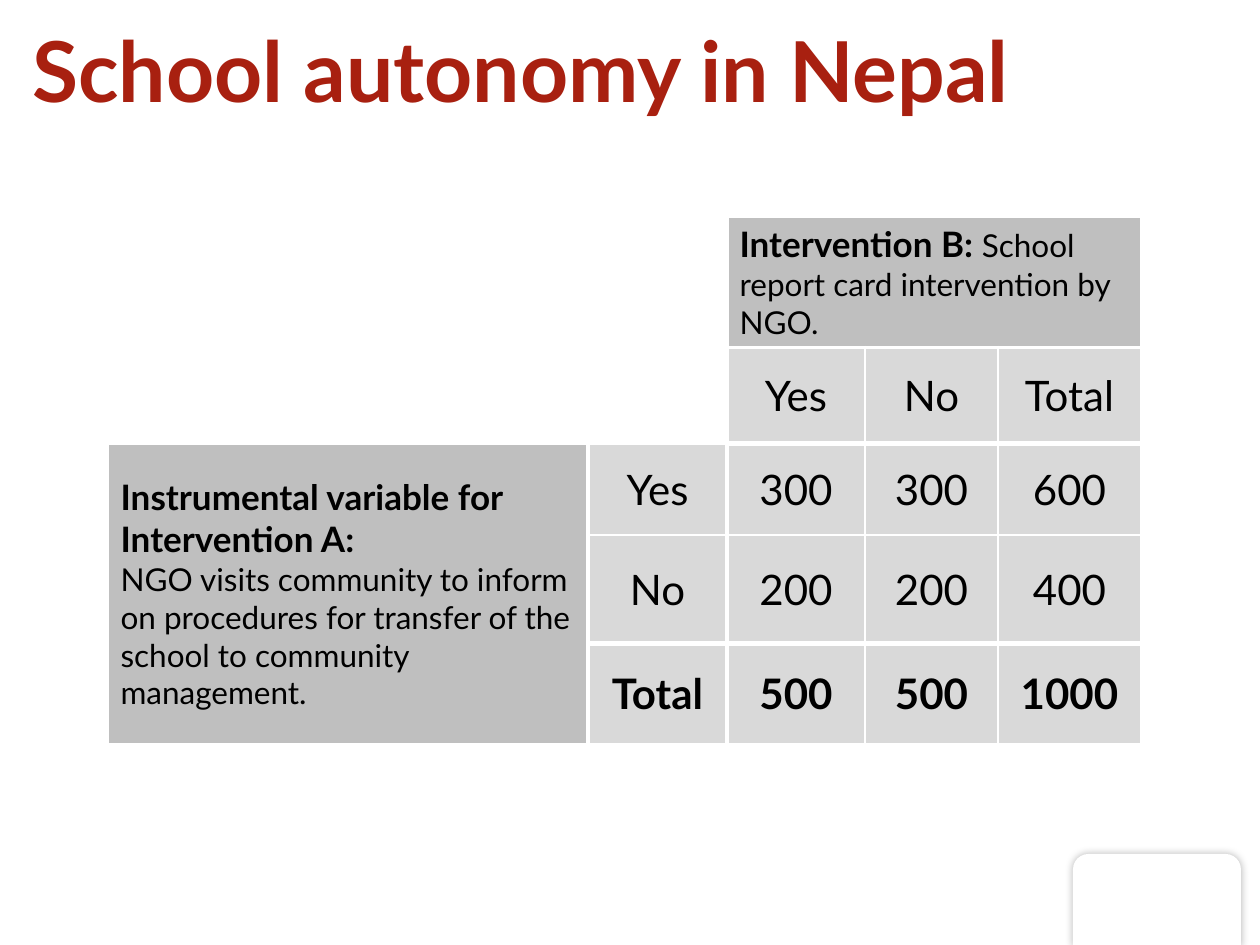
from dataclasses import dataclass

from lxml.etree import SubElement
from pptx import Presentation
from pptx.dml.color import RGBColor
from pptx.enum.shapes import MSO_SHAPE
from pptx.enum.text import MSO_ANCHOR, PP_ALIGN
from pptx.oxml.ns import qn
from pptx.util import Emu, Pt

SCALE = 914400 // 126


@dataclass(frozen=True)
class Theme:
    font: str = "Lato"
    title: str = "A82010"
    text: str = "000000"
    head: str = "BFBFBF"
    body: str = "D9D9D9"
    white: str = "FFFFFF"
    huge: int = 48
    large: int = 24
    lead: int = 20
    note: int = 18


THEME = Theme()

COLS = (480, 139, 138, 133, 143)
ROWS = (107, 96, 92, 108, 101)
# Line widths in points at each column and row edge
EDGES = {"col": (1, 2.25, 3, 1, 1, 1), "row": (1, 2.25, 3, 1, 3, 1)}
HEAD = 2  # rows and columns taken up by headings

LABELS = ("Yes", "No", "Total")
COUNTS = ((300, 300, 600), (200, 200, 400), (500, 500, 1000))
ACROSS = ("Intervention B: ", "School report card intervention by NGO.")
DOWN = (
    "Instrumental variable for Intervention A:",
    "NGO visits community to inform on procedures for transfer of the "
    "school to community management.",
)


def px(n):
    return Emu(n * SCALE)


def rgb(code):
    return RGBColor.from_string(code)


def style(font, size, bold=False, color=THEME.text):
    font.name, font.size, font.bold = THEME.font, Pt(size), bold
    font.color.rgb = rgb(color)


def add_title(slide, box, text):
    shape = slide.shapes.add_textbox(*map(px, box))
    frame = shape.text_frame
    frame.word_wrap = True
    frame.vertical_anchor = MSO_ANCHOR.MIDDLE
    para = frame.paragraphs[0]
    para.text = text
    style(para.font, THEME.huge, True, THEME.title)


def add_plate(slide, box):
    """Place the blank white plate with its soft shadow."""
    plate = slide.shapes.add_shape(MSO_SHAPE.ROUND_2_SAME_RECTANGLE, *map(px, box))
    plate.fill.solid()
    plate.fill.fore_color.rgb = rgb(THEME.white)
    plate.line.fill.background()
    plate.shadow.inherit = False
    effects = plate.element.spPr.find(qn("a:effectLst"))
    shade = SubElement(effects, qn("a:outerShdw"), blurRad=str(Pt(5)), dist="0",
                       dir="0", algn="ctr", rotWithShape="0")
    tint = SubElement(shade, qn("a:srgbClr"), val=THEME.text)
    SubElement(tint, qn("a:alpha"), val="30000")


def edge(axis, line, cross):
    """Width of a grid line; thinner where it borders the blank corner."""
    width = EDGES[axis][line]
    return min(width, 2.25) if line == HEAD and cross < HEAD else width


def rule(cell, row, col):
    bottom = row + (cell.span_height if cell.is_merge_origin else 1)
    right = col + (cell.span_width if cell.is_merge_origin else 1)
    sides = {
        "lnL": edge("col", col, row),
        "lnR": edge("col", right, row),
        "lnT": edge("row", row, col),
        "lnB": edge("row", bottom, col),
    }
    props = cell._tc.get_or_add_tcPr()
    for at, (tag, width) in enumerate(sides.items()):
        line = SubElement(props, qn("a:" + tag), w=str(Pt(width)))
        fill = SubElement(line, qn("a:solidFill"))
        SubElement(fill, qn("a:srgbClr"), val=THEME.white)
        props.insert(at, line)


def paint(cell, color):
    cell.fill.solid()
    cell.fill.fore_color.rgb = rgb(color)
    cell.vertical_anchor = MSO_ANCHOR.MIDDLE


def put(cell, value, bold=False):
    paint(cell, THEME.body)
    para = cell.text_frame.paragraphs[0]
    para.text = str(value)
    para.alignment = PP_ALIGN.CENTER
    style(para.font, THEME.large, bold)


def fill_heads(table):
    table.cell(0, 0).merge(table.cell(1, 1))
    table.cell(0, 0).fill.background()

    top = table.cell(0, HEAD)
    top.merge(table.cell(0, 4))
    paint(top, THEME.head)
    side = table.cell(HEAD, 0)
    side.merge(table.cell(4, 0))
    paint(side, THEME.head)

    para = top.text_frame.paragraphs[0]
    lines = side.text_frame
    lines.text = "\n".join(DOWN)
    looks = ((THEME.lead, True), (THEME.note, False))
    for text, line, look in zip(ACROSS, lines.paragraphs, looks):
        run = para.add_run()
        run.text = text
        style(run.font, *look)
        style(line.font, *look)


def add_grid(slide, box):
    frame = slide.shapes.add_table(len(ROWS), len(COLS), *map(px, box))
    table = frame.table
    table.first_row = table.horz_banding = False
    for col, width in zip(table.columns, COLS):
        col.width = px(width)
    for row, height in zip(table.rows, ROWS):
        row.height = px(height)
    frame.height = px(box[3])

    fill_heads(table)
    for i, (label, counts) in enumerate(zip(LABELS, COUNTS)):
        bold = label == "Total"
        put(table.cell(1, HEAD + i), label)
        put(table.cell(HEAD + i, 1), label, bold)
        for j, count in enumerate(counts):
            put(table.cell(HEAD + i, HEAD + j), count, bold)

    for r in range(len(ROWS)):
        for c in range(len(COLS)):
            cell = table.cell(r, c)
            if not cell.is_spanned:
                rule(cell, r, c)


def main():
    deck = Presentation()
    deck.slide_width, deck.slide_height = px(1260), px(945)
    slide = deck.slides.add_slide(deck.slide_layouts[6])
    add_plate(slide, (1073, 854, 168, 92))
    add_title(slide, (20, 10, 1221, 118), "School autonomy in Nepal")
    add_grid(slide, (108, 217, 1033, 527))
    deck.save("out.pptx")


if __name__ == "__main__":
    main()
